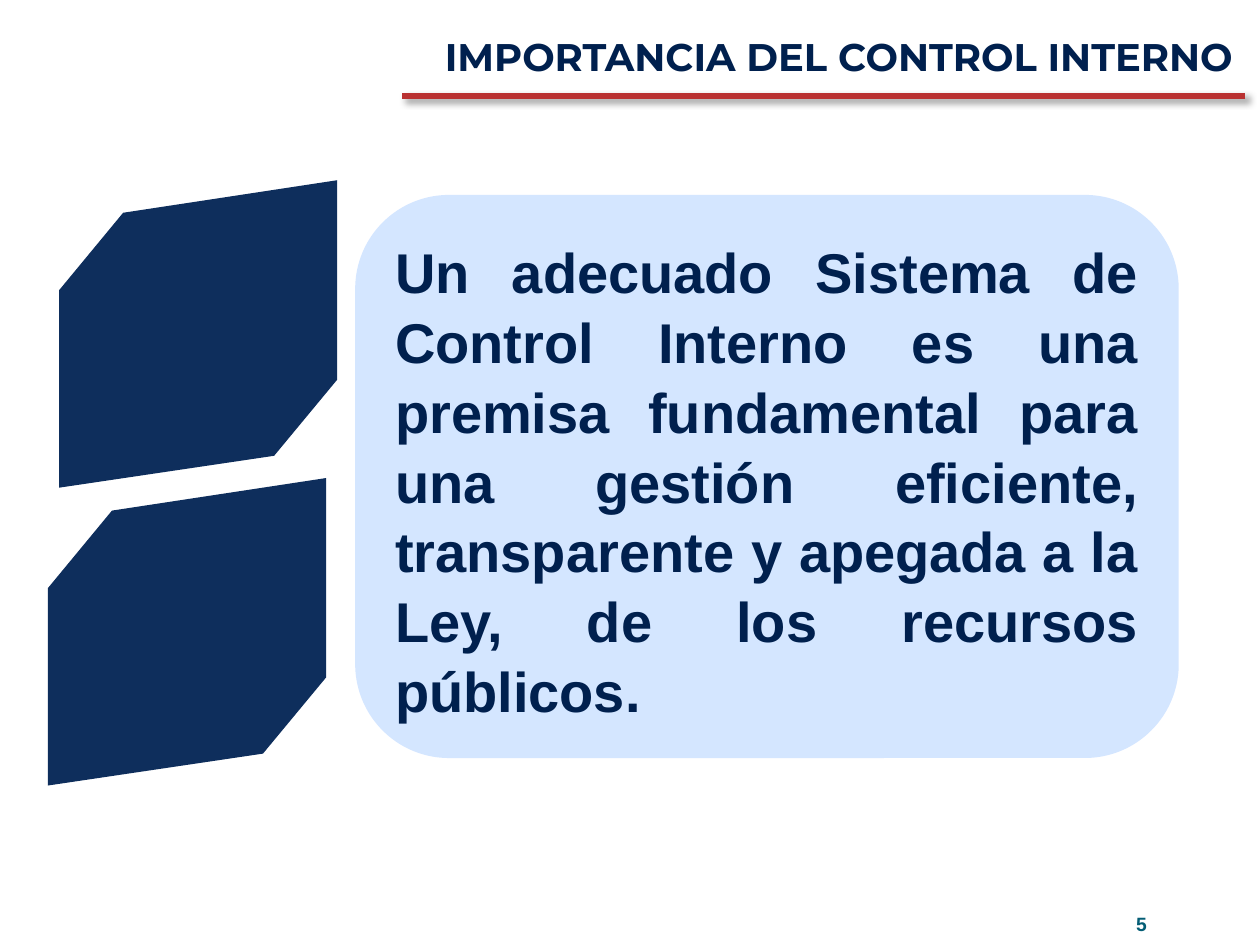
import pptx
import pptx.dml.color
import pptx.enum.shapes
import pptx.enum.text
import pptx.oxml
import pptx.oxml.ns
import pptx.util

Pt = pptx.util.Pt
RGBColor = pptx.dml.color.RGBColor
PP_ALIGN = pptx.enum.text.PP_ALIGN
MSO_ANCHOR = pptx.enum.text.MSO_ANCHOR

NAVY = RGBColor(0x00, 0x20, 0x4E)
BLOCK_BLUE = RGBColor(0x0E, 0x2E, 0x5C)
PALE_BLUE = RGBColor(0xD4, 0xE6, 0xFF)
RED = RGBColor(0xB9, 0x31, 0x31)
TEAL = RGBColor(0x04, 0x5D, 0x75)

# Outline of a tilted block, as offsets from its top left corner
BLOCK_OUTLINE = [(0, 62.9), (36.6, 18.6), (158.9, 0),
                 (158.9, 114), (122.9, 157.5), (0, 175.7)]

RULE_SHADOW = (
    f'<a:effectLst {pptx.oxml.ns.nsdecls("a")}>'
    '<a:outerShdw blurRad="50800" dist="38100" dir="2700000" algn="tl" rotWithShape="0">'
    '<a:srgbClr val="000000"><a:alpha val="40000"/></a:srgbClr>'
    '</a:outerShdw></a:effectLst>')


def write_text(frame, text, font_name, size, color, align):
    frame.word_wrap = True
    frame.text = text
    paragraph = frame.paragraphs[0]
    paragraph.alignment = align
    font = paragraph.runs[0].font
    font.name, font.size, font.bold = font_name, Pt(size), True
    font.color.rgb = color
    return paragraph


def add_heading(slide, left, top, width, height):
    title = slide.shapes.title
    title.left, title.top, title.width, title.height = map(Pt, (left, top, width, height))
    write_text(title.text_frame, "IMPORTANCIA DEL CONTROL INTERNO",
               "Montserrat", 22, NAVY, PP_ALIGN.RIGHT)
    title.text_frame.vertical_anchor = MSO_ANCHOR.MIDDLE

    # Red rule under the title
    right, rule_y = left + width, top + height + 6
    rule = slide.shapes.add_connector(
        pptx.enum.shapes.MSO_CONNECTOR.STRAIGHT,
        Pt(right), Pt(rule_y), Pt(left + 28), Pt(rule_y))
    rule.line.color.rgb = RED
    rule.line.width = Pt(3.5)
    rule._element.spPr.append(pptx.oxml.parse_xml(RULE_SHADOW))


def add_block(slide, left, top):
    points = [(Pt(left + x), Pt(top + y)) for x, y in BLOCK_OUTLINE]
    builder = slide.shapes.build_freeform(*points[0])
    builder.add_line_segments(points[1:], close=True)
    block = builder.convert_to_shape()
    block.shadow.inherit = False
    block.fill.solid()
    block.fill.fore_color.rgb = BLOCK_BLUE
    block.line.fill.background()


def add_statement(slide, left, top, width, height):
    panel = slide.shapes.add_shape(
        pptx.enum.shapes.MSO_SHAPE.ROUNDED_RECTANGLE,
        Pt(left), Pt(top), Pt(width), Pt(height))
    panel.shadow.inherit = False
    panel.fill.solid()
    panel.fill.fore_color.rgb = PALE_BLUE
    panel.line.fill.background()
    frame = panel.text_frame
    frame.vertical_anchor = MSO_ANCHOR.TOP
    frame.margin_top = Pt(7)
    paragraph = write_text(
        frame,
        "Un adecuado Sistema de Control Interno es una premisa fundamental para una "
        "gestión eficiente, transparente y apegada a la Ley, de los recursos públicos.",
        "Arial", 32, NAVY, PP_ALIGN.JUSTIFY)
    paragraph.line_spacing = 1.04


def add_page_number(slide, left, top, width, height):
    number = slide.shapes.add_textbox(Pt(left), Pt(top), Pt(width), Pt(height))
    write_text(number.text_frame, "5", "Arial", 11, TEAL, PP_ALIGN.LEFT)


def main():
    deck = pptx.Presentation()
    deck.slide_width, deck.slide_height = Pt(720), Pt(540)
    slide = deck.slides.add_slide(deck.slide_layouts[5])

    add_heading(slide, 201.6, 15, 510, 33.8)
    add_statement(slide, 203, 111.4, 470.6, 321.8)
    # Tilted blocks beside the statement
    for left, top in ((33.8, 103), (27.4, 273.2)):
        add_block(slide, left, top)
    add_page_number(slide, 642.2, 517.7, 72.7, 22.3)

    deck.save("out.pptx")


if __name__ == "__main__":
    main()
